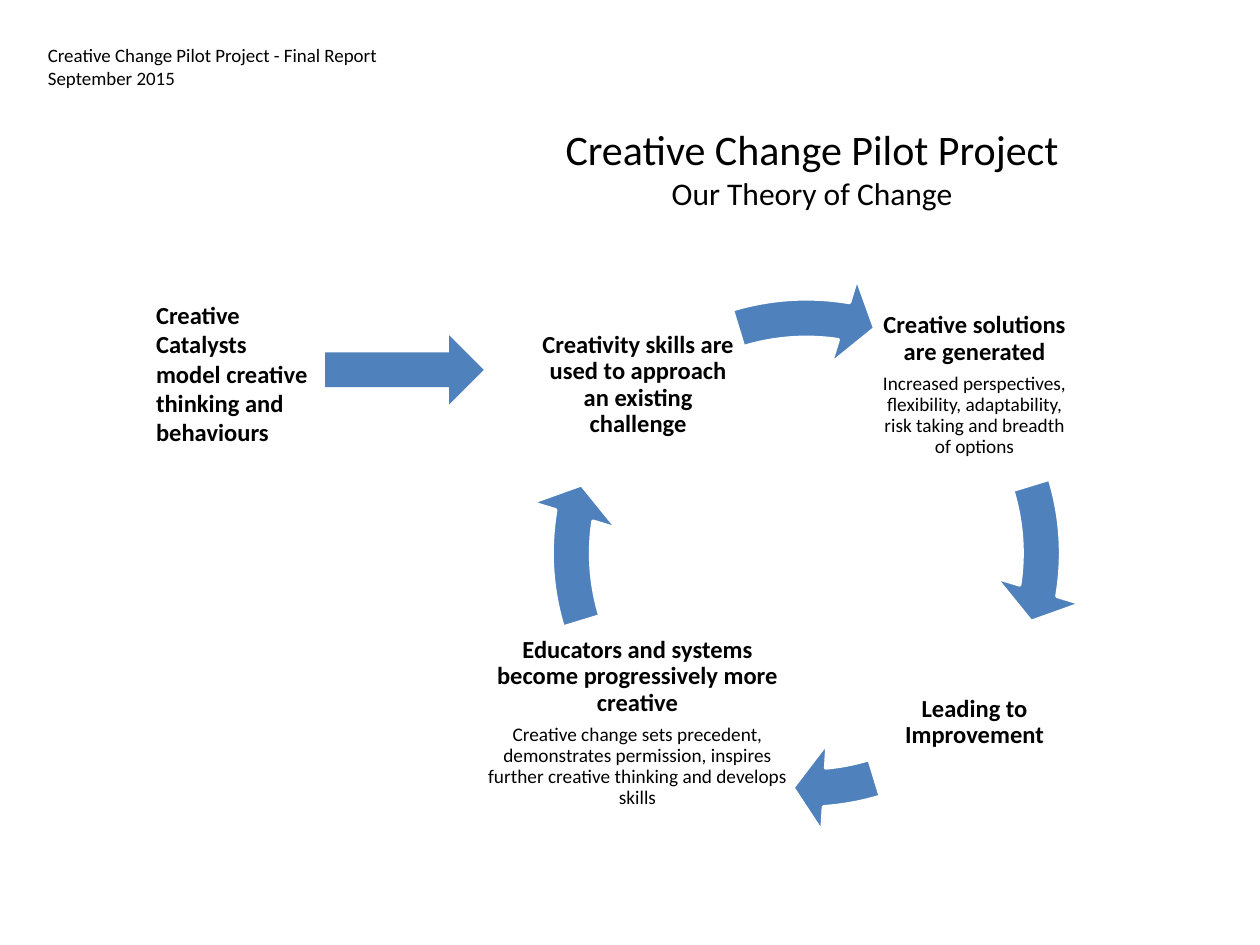
from pptx import Presentation
from pptx.dml.color import RGBColor
from pptx.enum.shapes import MSO_SHAPE
from pptx.enum.text import MSO_ANCHOR, MSO_AUTO_SIZE, PP_ALIGN
from pptx.util import Inches, Pt

CIRCULAR_ARROW = MSO_SHAPE.CIRCULAR_ARROW
RIGHT_ARROW = MSO_SHAPE.RIGHT_ARROW
MIDDLE = MSO_ANCHOR.MIDDLE
TOP = MSO_ANCHOR.TOP
LEFT = PP_ALIGN.LEFT
CENTER = PP_ALIGN.CENTER
FIT_SHAPE = MSO_AUTO_SIZE.SHAPE_TO_FIT_TEXT
NO_FIT = MSO_AUTO_SIZE.NONE

BLACK = RGBColor(0, 0, 0)
WHITE = RGBColor(255, 255, 255)
BLUE = RGBColor(0x4F, 0x81, 0xBD)
FONT = "Calibri"

# Stages of the cycle: left, top, width, heading, detail
STAGES = [
    (6.95, 2.27, 1.57, "Creative solutions are generated",
     "Increased perspectives, flexibility, adaptability, risk taking "
     "and breadth of options"),
    (6.95, 4.95, 1.57, "Leading to Improvement", None),
    (3.83, 4.95, 2.46, "Educators and systems become progressively more creative",
     "Creative change sets precedent, demonstrates permission, inspires "
     "further creative thinking and develops skills"),
    (4.28, 2.27, 1.57,
     "Creativity skills are used to approach an existing challenge", None),
]
STAGE_HEIGHT = 1.57

# Start and end angles of the arrow that leaves each stage, in degrees
ARROW_ANGLES = [(343.07, 9.18), (73.07, 85.55), (163.07, 189.18), (253.07, 279.18)]
RING = (4.18, 2.17, 4.44, 4.44)
HEAD_ANGLE = 7.75
ANGLE_UNIT = 0.6  # adjustment value for one degree


def add_span(para, text, size, bold=False):
    span = para.add_run()
    span.text = text
    span.font.name = FONT
    span.font.size = Pt(size)
    span.font.bold = bold
    span.font.color.rgb = BLACK


def add_text(page, place, lines, align=LEFT, anchor=TOP, wrap=True, fit=FIT_SHAPE):
    """Add a text box; each line is (text, size, bold)."""
    box = page.shapes.add_textbox(*map(Inches, place))
    frame = box.text_frame
    frame.word_wrap = wrap
    frame.auto_size = fit
    frame.vertical_anchor = anchor
    for index, line in enumerate(lines):
        para = frame.add_paragraph() if index else frame.paragraphs[0]
        para.alignment = align
        add_span(para, *line)
    return box


def add_stage(page, left, top, width, heading, detail):
    lines = [(heading, 14, True)]
    if detail:
        lines.append((detail, 11, False))
    place = (left, top, width, STAGE_HEIGHT)
    frame = add_text(page, place, lines, CENTER, MIDDLE, fit=NO_FIT).text_frame
    frame.margin_left = frame.margin_right = Inches(0.02)
    frame.margin_top = frame.margin_bottom = Inches(0.02)
    for para, (_, size, _) in zip(frame.paragraphs, lines):
        para.line_spacing = 0.9
        para.space_after = Pt(0.35 * size)


def add_arrow(page, kind, place):
    arrow = page.shapes.add_shape(kind, *map(Inches, place))
    arrow.shadow.inherit = False
    arrow.fill.solid()
    arrow.fill.fore_color.rgb = BLUE
    arrow.line.fill.background()
    return arrow


def add_cycle_arrow(page, start, end):
    arrow = add_arrow(page, CIRCULAR_ARROW, RING)
    arrow.line.color.rgb = WHITE
    arrow.line.width = Pt(2)
    settings = (0.069, HEAD_ANGLE * ANGLE_UNIT, end * ANGLE_UNIT,
                start * ANGLE_UNIT, 0.08)
    for index, value in enumerate(settings):
        arrow.adjustments[index] = value


def fill_title(page):
    title = page.shapes.title
    title.left, title.top = Inches(0.28), Inches(0.29)
    title.width, title.height = Inches(9), Inches(0.47)
    frame = title.text_frame
    frame.auto_size = NO_FIT
    frame.vertical_anchor = MIDDLE
    para = frame.paragraphs[0]
    para.alignment = LEFT
    add_span(para, "Creative Change Pilot Project - Final Report", 10.8)
    para.add_line_break()
    add_span(para, "September 2015", 10.8)


def main():
    deck = Presentation()
    deck.slide_width, deck.slide_height = Inches(10), Inches(7.5)
    page = deck.slides.add_slide(deck.slide_layouts[5])

    # Report name and heading
    fill_title(page)
    add_text(page, (4.37, 0.93, 4.15, 0.81),
             [("Creative Change Pilot Project", 24, False),
              ("Our Theory of Change", 18, False)], CENTER, wrap=False)

    # Cycle of change
    for stage, angles in zip(STAGES, ARROW_ANGLES):
        add_stage(page, *stage)
        add_cycle_arrow(page, *angles)

    # Way into the cycle
    add_arrow(page, RIGHT_ARROW, (2.58, 2.66, 1.26, 0.55))
    add_text(page, (1.14, 2.33, 1.42, 1.28),
             [("Creative Catalysts model creative thinking and behaviours", 14, True)])

    deck.save("out.pptx")


if __name__ == "__main__":
    main()
